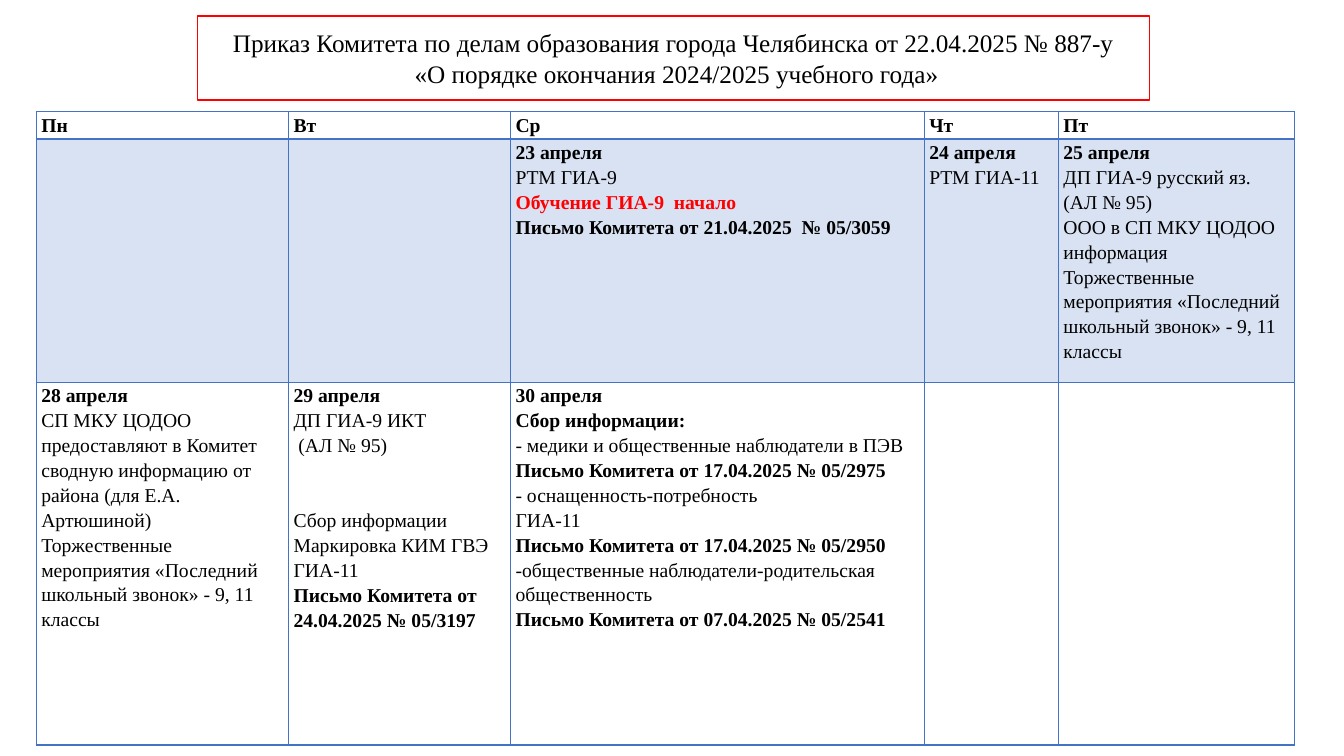
from lxml.etree import SubElement
from pptx import Presentation
from pptx.dml.color import RGBColor
from pptx.enum.text import MSO_ANCHOR, MSO_AUTO_SIZE, PP_ALIGN
from pptx.oxml import parse_xml
from pptx.oxml.ns import nsdecls, qn
from pptx.util import Inches, Pt

WIDTH, HEIGHT = 13.33, 7.5
FONT = "Times New Roman"
BLACK, WHITE, RED, BLUE = "000000", "FFFFFF", "FF0000", "4472C4"

# Boxes: left, top, width, height in inches
TITLE_BOX = (1.96, 0.22, 9.44, 0.71)
CALENDAR_BOX = (0.36, 1.11, 12.48, 6.27)
COLUMN_PARTS = (2.5, 2.2, 4.1, 1.33, 2.34)
ROW_PARTS = (0.26, 2.41, 3.6)

TITLE_LINES = (
    "Приказ Комитета по делам образования города Челябинска от 22.04.2025 № 887-у",
    " «О порядке окончания 2024/2025 учебного года»",
)
BOLD = {"bold": True}
CLOSING = "Торжественные мероприятия «Последний школьный звонок» - 9, 11 классы"

# Each cell is a list of (text, format) paragraphs
WEEKS = [
    [[(day, BOLD)] for day in ("Пн", "Вт", "Ср", "Чт", "Пт")],
    [
        [],
        [],
        [("23 апреля", BOLD),
         ("РТМ ГИА-9", {}),
         ("Обучение ГИА-9  начало", {"bold": True, "color": RED}),
         ("Письмо Комитета от 21.04.2025  № 05/3059", BOLD)],
        [("24 апреля", BOLD),
         ("РТМ ГИА-11", {})],
        [("25 апреля", BOLD),
         ("ДП ГИА-9 русский яз. (АЛ № 95)", {}),
         (f"ООО в СП МКУ ЦОДОО информация {CLOSING}", {})],
    ],
    [
        [("28 апреля", BOLD),
         ("СП МКУ ЦОДОО предоставляют в Комитет сводную информацию от района "
          f"(для Е.А. Артюшиной) {CLOSING}", {})],
        [("29 апреля", BOLD),
         ("ДП ГИА-9 ИКТ", {}),
         (" (АЛ № 95)", {}),
         ("Сбор информации", {"before": 36}),
         ("Маркировка КИМ ГВЭ ГИА-11", {}),
         ("Письмо Комитета от 24.04.2025 № 05/3197", BOLD)],
        [("30 апреля", BOLD),
         ("Сбор информации:", BOLD),
         ("- медики и общественные наблюдатели в ПЭВ", {}),
         ("Письмо Комитета от 17.04.2025 № 05/2975", BOLD),
         ("- оснащенность-потребность", {}),
         ("ГИА-11", {}),
         ("Письмо Комитета от 17.04.2025 № 05/2950", BOLD),
         ("-общественные наблюдатели-родительская общественность", {}),
         ("Письмо Комитета от 07.04.2025 № 05/2541", BOLD)],
        [],
        [],
    ],
]


def rgb(color):
    return RGBColor.from_string(color)


def write(frame, text, size=14, bold=False, color=BLACK, spacing=1.15,
          before=0, align=PP_ALIGN.LEFT):
    """Write one paragraph, using the frame's first one while it is empty."""
    para = frame.paragraphs[0] if not frame.text else frame.add_paragraph()
    para.alignment = align
    para.line_spacing = spacing
    para.space_before = Pt(before)
    span = para.add_run()
    span.text = text
    span.font.name = FONT
    span.font.size = Pt(size)
    span.font.bold = bold
    span.font.color.rgb = rgb(color)


def add_title(page, box):
    title = page.shapes.title
    title.left, title.top, title.width, title.height = map(Inches, box)
    title.fill.solid()
    title.fill.fore_color.rgb = rgb(WHITE)
    title.line.color.rgb = rgb(RED)
    title.line.width = Pt(1)
    frame = title.text_frame
    frame.word_wrap = True
    frame.auto_size = MSO_AUTO_SIZE.SHAPE_TO_FIT_TEXT
    frame.vertical_anchor = MSO_ANCHOR.MIDDLE
    for line in TITLE_LINES:
        write(frame, line, size=18, spacing=1.0, align=PP_ALIGN.CENTER)


def fill_cell(cell, shaded):
    if not shaded:
        cell.fill.background()
        return
    cell.fill.solid()
    cell.fill.fore_color.rgb = rgb(BLUE)
    tint = next(cell._tc.tcPr.iter(qn("a:srgbClr")))
    SubElement(tint, qn("a:alpha")).set("val", "20000")


def add_borders(cell, **widths):
    """Draw the four sides; they stand before the fill in the cell's XML."""
    properties = cell._tc.get_or_add_tcPr()
    for place, side in enumerate("LRTB"):
        width = Pt(widths.get(side, 1))
        properties.insert(place, parse_xml(
            f'<a:ln{side} {nsdecls("a")} w="{width}"><a:solidFill>'
            f'<a:srgbClr val="{BLUE}"/></a:solidFill></a:ln{side}>'))


def add_calendar(page, box):
    left, top, width, height = box
    table = page.shapes.add_table(len(ROW_PARTS), len(COLUMN_PARTS),
                                  *map(Inches, box)).table
    table.first_row = table.horz_banding = False
    for column, part in zip(table.columns, COLUMN_PARTS):
        column.width = Inches(width * part / sum(COLUMN_PARTS))
    for row, part in zip(table.rows, ROW_PARTS):
        row.height = Inches(height * part / sum(ROW_PARTS))

    for week, days in enumerate(WEEKS):
        for day, entries in enumerate(days):
            cell = table.cell(week, day)
            cell.margin_left = cell.margin_right = Inches(0.05)
            cell.margin_top = cell.margin_bottom = 0
            fill_cell(cell, shaded=week == 1)
            # The heading row is ruled off with a thicker line
            add_borders(cell, T=2 if week == 1 else 1, B=2 if week == 0 else 1)
            for text, style in entries:
                write(cell.text_frame, text, **style)


def main():
    deck = Presentation()
    deck.slide_width, deck.slide_height = Inches(WIDTH), Inches(HEIGHT)
    page = deck.slides.add_slide(deck.slide_layouts[5])
    add_calendar(page, CALENDAR_BOX)
    add_title(page, TITLE_BOX)
    deck.save("out.pptx")


if __name__ == "__main__":
    main()
